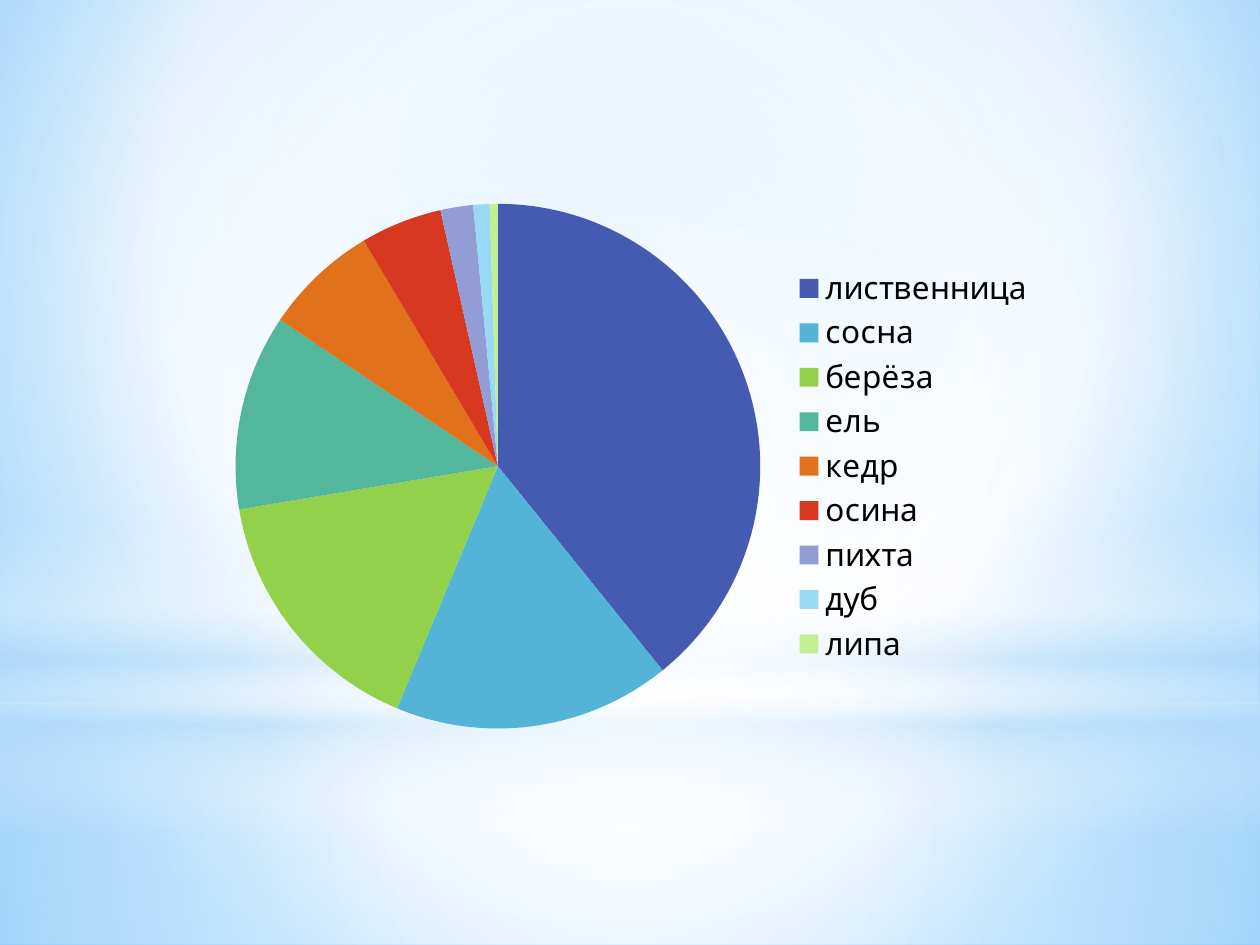
from lxml.etree import SubElement as Sub
from pptx import Presentation
from pptx.chart.data import CategoryChartData as Data
from pptx.dml.color import RGBColor as Rgb
from pptx.enum.chart import XL_CHART_TYPE as Kind, XL_LEGEND_POSITION as Side
from pptx.enum.shapes import MSO_SHAPE as Form
from pptx.oxml.ns import qn
from pptx.util import Inches, Pt

WHITE, PALE = "FFFFFF", "B4DCFA"
MID = (50, 50, 50, 50)
TREES = [
    ("лиственница", 39, "455AB1"),
    ("сосна", 17, "53B4D8"),
    ("берёза", 16, "94D14A"),
    ("ель", 12, "53B79B"),
    ("кедр", 7, "E2711C"),
    ("осина", 5, "D63820"),
    ("пихта", 2, "929CD5"),
    ("дуб", 1, "98D9F6"),
    ("липа", 0.5, "C0F092"),
]
LAYERS = [
    (Form.RECTANGLE, 5.58, 1.92,
     [(0, WHITE, 91), (37, WHITE, 76), (100, PALE, 79)], MID),
    (Form.RECTANGLE, 0, 5.58,
     [(0, WHITE, 89), (48, WHITE, 62), (100, PALE, 79)], MID),
    (Form.RECTANGLE, 4.12, 2.5,
     [(0, WHITE, 0), (29, WHITE, 30), (45, PALE, 40), (55, WHITE, 26),
      (65, PALE, 60), (100, WHITE, 0)], None),
    (Form.OVAL, 1.75, 5.58, [(0, WHITE, 100), (56, WHITE, 0)], MID),
]


def color(code):
    return Rgb.from_string(code)


def blend(host, fill, stops, focus):
    fill.gradient()
    grad = next(host.element.iter(qn("a:gradFill")))
    for child in list(grad):
        grad.remove(child)
    group = Sub(grad, qn("a:gsLst"))
    for place, code, alpha in stops:
        stop = Sub(group, qn("a:gs"), pos=str(place * 1000))
        tint = Sub(stop, qn("a:srgbClr"), val=code)
        if alpha < 100:
            Sub(tint, qn("a:alpha"), val=str(alpha * 1000))
    if focus:
        route = Sub(grad, qn("a:path"), path="circle")
        edges = {side: str(part * 1000) for side, part in zip("ltrb", focus)}
        Sub(route, qn("a:fillToRect"), **edges)
    else:
        Sub(grad, qn("a:lin"), ang="5400000", scaled="0")


def add_layer(slide, form, top, height, stops, focus):
    shape = slide.shapes.add_shape(
        form, 0, Inches(top), Inches(10), Inches(height))
    shape.shadow.inherit = False
    shape.line.fill.background()
    blend(shape, shape.fill, stops, focus)


def add_pie(slide):
    names, values, codes = zip(*TREES)
    data = Data()
    data.categories = names
    data.add_series("Series 1", values)
    chart = slide.shapes.add_chart(
        Kind.PIE, Inches(1.64), Inches(1.48), Inches(6.67), Inches(4.44), data
    ).chart
    chart.has_title = False
    chart.font.name = "Cabin"
    chart.font.size = Pt(18)
    chart.font.color.rgb = color("000000")
    chart.has_legend = True
    chart.legend.position = Side.RIGHT
    chart.legend.include_in_layout = False
    plot = chart.plots[0]
    plot.vary_by_categories = True
    for i, code in enumerate(codes):
        slice_fill = plot.series[0].points[i].format.fill
        slice_fill.solid()
        slice_fill.fore_color.rgb = color(code)


def main():
    deck = Presentation()
    deck.slide_width, deck.slide_height = Inches(10), Inches(7.5)
    slide = deck.slides.add_slide(deck.slide_layouts[6])
    sky = [(0, "9ED5FF", 100), (60, WHITE, 100), (100, "5BB9FF", 100)]
    blend(slide, slide.background.fill, sky, (20, 10, 20, 60))
    for layer in LAYERS:
        add_layer(slide, *layer)
    add_pie(slide)
    deck.save("out.pptx")


if __name__ == "__main__":
    main()
